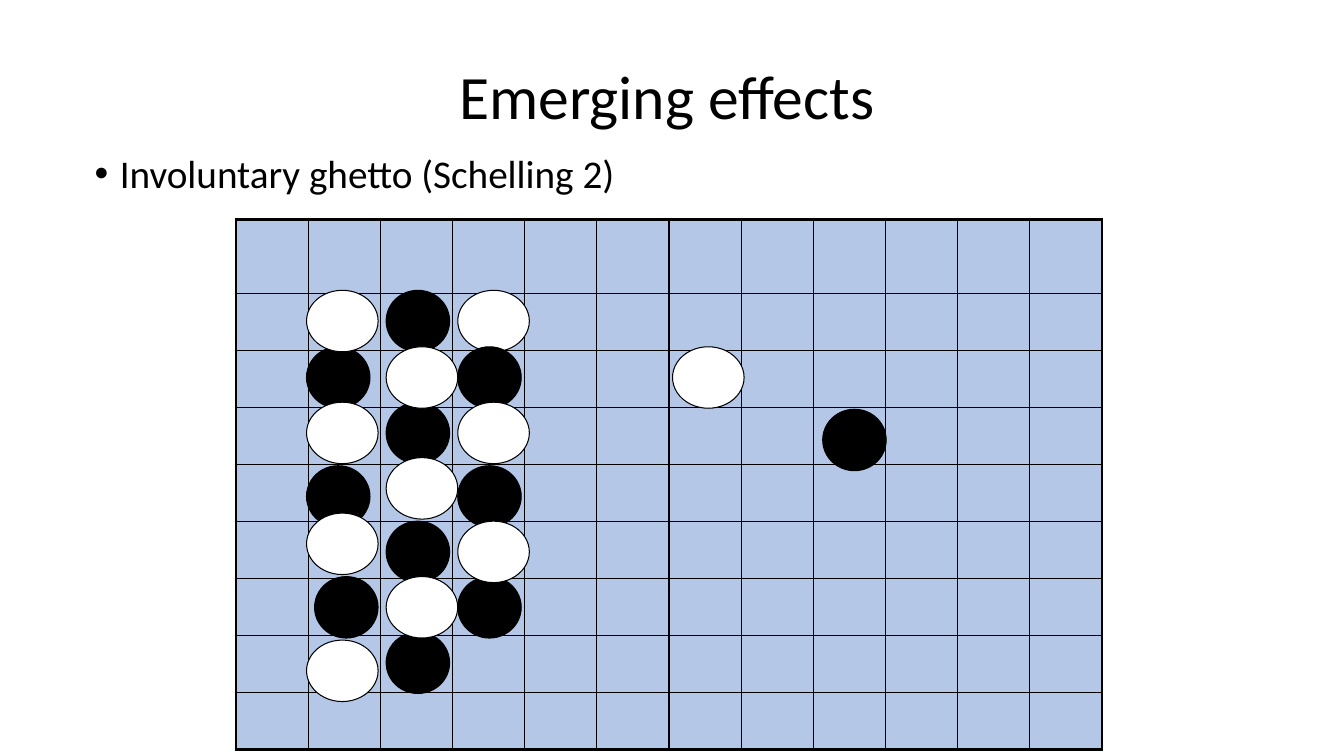
from lxml import etree
from pptx import Presentation
from pptx.dml.color import RGBColor
from pptx.enum.shapes import MSO_SHAPE
from pptx.enum.text import MSO_ANCHOR, PP_ALIGN
from pptx.oxml.ns import qn
from pptx.util import Inches, Pt

BLACK = RGBColor(0x00, 0x00, 0x00)
WHITE = RGBColor(0xFF, 0xFF, 0xFF)
BOARD_BLUE = RGBColor(0xB4, 0xC7, 0xE7)
OVAL = MSO_SHAPE.OVAL
MIDDLE, TOP = MSO_ANCHOR.MIDDLE, MSO_ANCHOR.TOP
CENTER, LEFT = PP_ALIGN.CENTER, PP_ALIGN.LEFT

ROWS, COLUMNS = 9, 12
BOARD_WIDTH, BOARD_HEIGHT, TOP_ROW_HEIGHT = 8.59, 5.26, 0.73
THIN, THICK = 1, 2.25
DISC_WIDTHS = {BLACK: 0.63, WHITE: 0.71}
DISC_HEIGHT = 0.61

DISC_LAYERS = [
    (WHITE, [(4.54, 2.88)]),
    (BLACK, [(3.83, 2.88), (3.83, 3.99), (3.83, 5.17), (3.83, 6.27),
             (4.54, 3.44), (4.54, 4.62), (4.54, 5.72),
             (3.04, 3.44), (3.04, 4.62), (3.12, 5.72), (8.16, 4.06)]),
    (WHITE, [(3.04, 2.88), (3.83, 3.44), (3.04, 3.99), (4.54, 3.99),
             (3.83, 4.54), (3.04, 5.09), (4.54, 5.17), (3.04, 6.35),
             (3.83, 5.72), (6.67, 3.44)]),
]


class SlideBuilder:
    """Draws text, a board and discs on one slide in a shared style."""

    font = "Calibri"

    def __init__(self, slide):
        self.slide = slide

    def text(self, words, left, top, width, height, size, align=LEFT, anchor=TOP):
        box = self.slide.shapes.add_textbox(
            Inches(left), Inches(top), Inches(width), Inches(height))
        frame = box.text_frame
        frame.word_wrap = True
        frame.vertical_anchor = anchor
        frame.text = words
        paragraph = frame.paragraphs[0]
        paragraph.alignment = align
        paragraph.line_spacing = 0.9
        font = paragraph.runs[0].font
        font.name, font.size = self.font, Pt(size)
        font.color.rgb = BLACK
        return paragraph

    def bullet(self, words, left, top, width, height, size):
        paragraph = self.text(words, left, top, width, height, size)
        paragraph.space_before = Pt(10)
        properties = paragraph._p.get_or_add_pPr()
        properties.set("marL", str(Inches(0.25)))
        properties.set("indent", str(-Inches(0.25)))
        etree.SubElement(properties, qn("a:buFont"), typeface="Arial")
        etree.SubElement(properties, qn("a:buChar"), char="•")

    def border(self, cell, side, points):
        line = etree.SubElement(
            cell._tc.get_or_add_tcPr(), qn(f"a:ln{side}"), w=str(Pt(points)))
        fill = etree.SubElement(line, qn("a:solidFill"))
        etree.SubElement(fill, qn("a:srgbClr"), val=str(BLACK))

    def board(self, left, top):
        board = self.slide.shapes.add_table(
            ROWS, COLUMNS, Inches(left), Inches(top),
            Inches(BOARD_WIDTH), Inches(BOARD_HEIGHT)).table
        board.first_row = board.horz_banding = False
        for column in board.columns:
            column.width = Inches(BOARD_WIDTH / COLUMNS)
        for row in board.rows:
            row.height = Inches((BOARD_HEIGHT - TOP_ROW_HEIGHT) / (ROWS - 1))
        board.rows[0].height = Inches(TOP_ROW_HEIGHT)
        for r in range(ROWS):
            for c in range(COLUMNS):
                square = board.cell(r, c)
                outer = {"L": c == 0, "R": c == COLUMNS - 1,
                         "T": r == 0, "B": r == ROWS - 1}
                for side, on_edge in outer.items():
                    self.border(square, side, THICK if on_edge else THIN)
                square.fill.solid()
                square.fill.fore_color.rgb = BOARD_BLUE

    def disc(self, color, left, top):
        disc = self.slide.shapes.add_shape(
            OVAL, Inches(left), Inches(top),
            Inches(DISC_WIDTHS[color]), Inches(DISC_HEIGHT))
        disc.shadow.inherit = False
        disc.fill.solid()
        disc.fill.fore_color.rgb = color
        disc.line.color.rgb = BLACK
        disc.line.width = Pt(0.75)


def main():
    deck = Presentation()
    deck.slide_width, deck.slide_height = Inches(13.33), Inches(7.5)
    builder = SlideBuilder(deck.slides.add_slide(deck.slide_layouts[6]))
    builder.text("Emerging effects", 0.84, 0.32, 11.55, 1.33, 44, CENTER, MIDDLE)
    builder.bullet("Involuntary ghetto (Schelling 2)", 0.84, 1.48, 6.53, 0.61, 28)
    builder.board(2.34, 2.18)
    for color, places in DISC_LAYERS:
        for left, top in places:
            builder.disc(color, left, top)
    deck.save("out.pptx")


if __name__ == "__main__":
    main()
